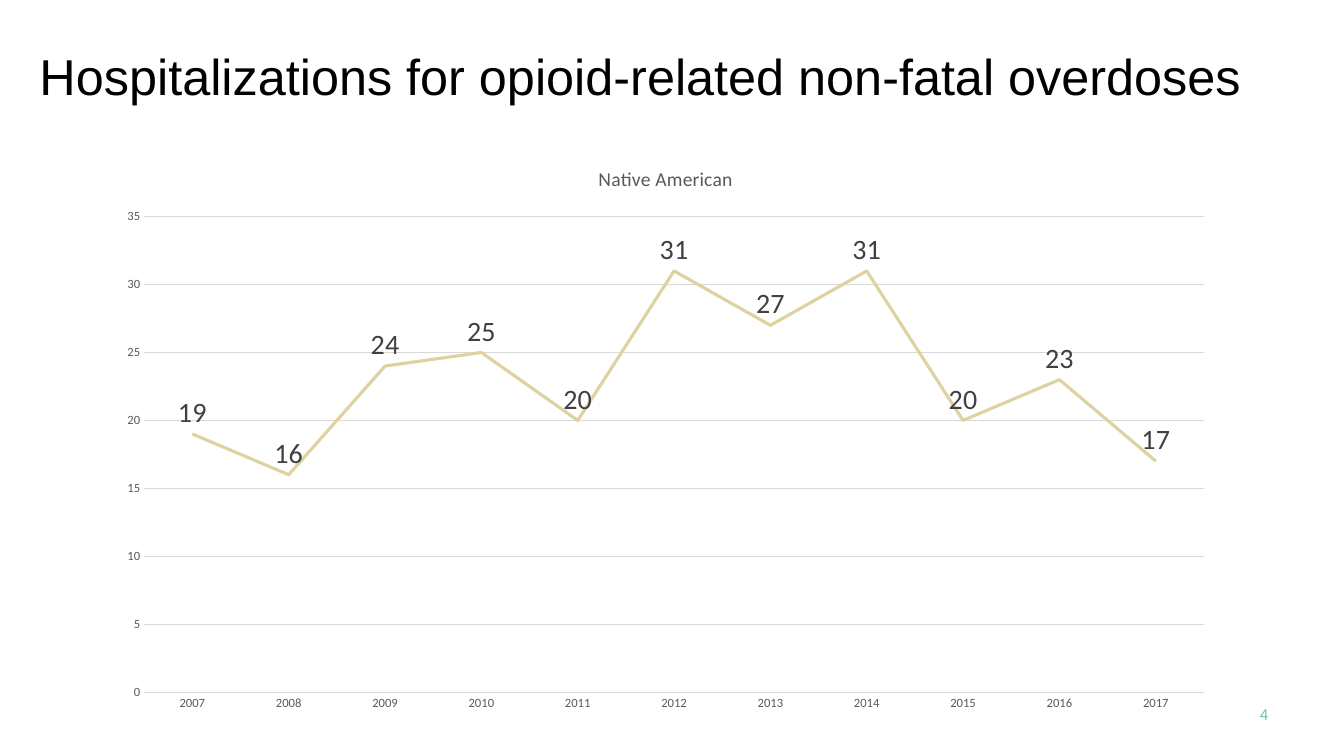
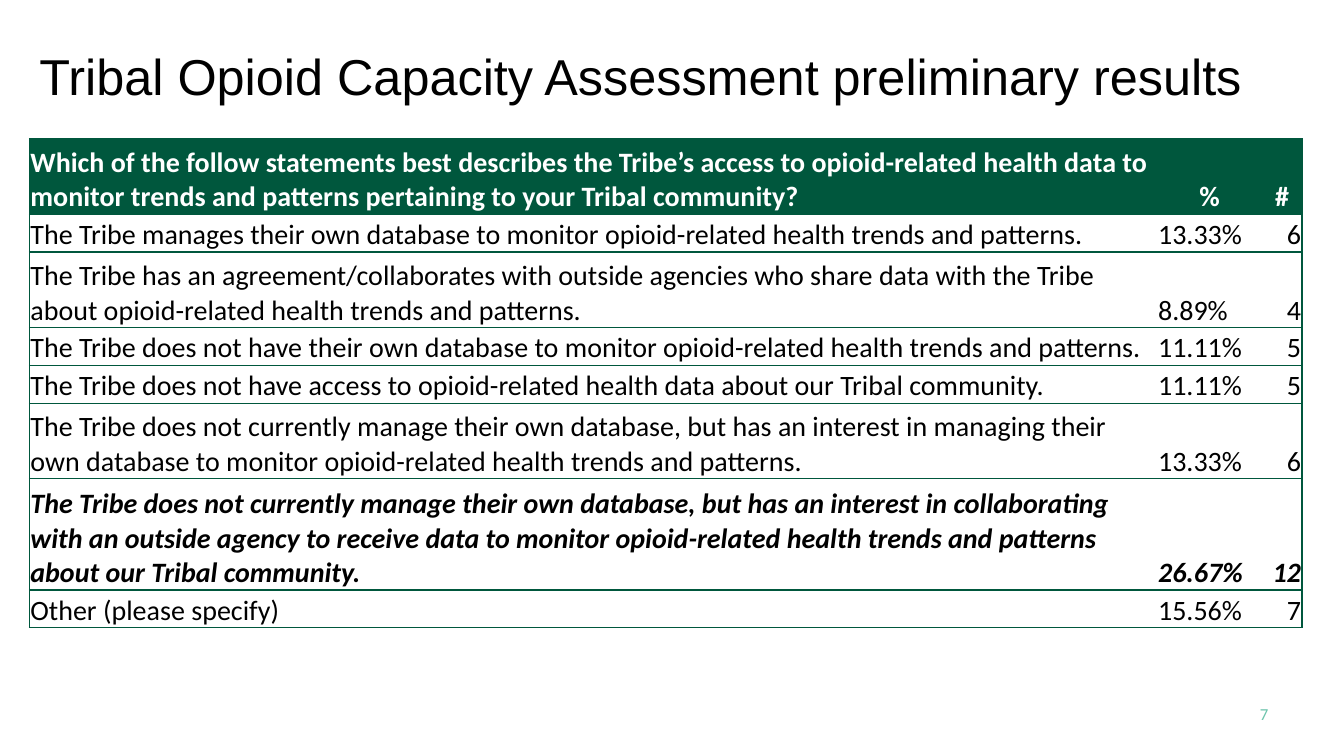
import pptx
import pptx.chart.data
import pptx.dml.color
import pptx.enum.chart
import pptx.enum.text
import pptx.oxml
import pptx.oxml.ns
import pptx.util

COLORS = {
    "black": "000000",
    "white": "FFFFFF",
    "forest": "00573D",
    "mint": "6CC4AC",
    "sand": "DED2A0",
    "grid": "D9D9D9",
    "axis": "595959",
    "label": "404040",
}
HEADING_FONT, BODY_FONT = "Arial", "Calibri"

# The slide is a grid of square units, 24 to the inch.
COLUMNS, ROWS = 320, 180
UNIT = pptx.util.Inches(1 / 24)

# Boxes are left, top, width and height in grid units.
TITLE_BOX = (7, 9, 303, 18)
NUMBER_BOX = (292, 168, 18, 4)
CHART_BOX = (25, 34.5, 267, 137.5)
TABLE_BOX = (7, 33, 303, 116.5)

ALIGN = pptx.enum.text.PP_ALIGN
ANCHOR = pptx.enum.text.MSO_ANCHOR

YEARS = [str(year) for year in range(2007, 2018)]
HOSPITALIZATIONS = [19, 16, 24, 25, 20, 31, 27, 31, 20, 23, 17]

TABLE_COLUMNS = (268.5, 25, 9.5)
TABLE_ALIGNS = (ALIGN.LEFT, ALIGN.LEFT, ALIGN.RIGHT)
HEADER_ALIGNS = (ALIGN.LEFT, ALIGN.CENTER, ALIGN.CENTER)
TABLE_ROWS = (18, 9, 18, 9, 9, 18, 26.5, 9)
EMPHASIZED_ROW = 6
ANSWERS = [
    ("Which of the follow statements best describes the Tribe’s access to opioid-related "
     "health data to monitor trends and patterns pertaining to your Tribal community?",
     "%", "#"),
    ("The Tribe manages their own database to monitor opioid-related health trends "
     "and patterns.", "13.33%", "6"),
    ("The Tribe has an agreement/collaborates with outside agencies who share data with "
     "the Tribe about opioid-related health trends and patterns.", "8.89%", "4"),
    ("The Tribe does not have their own database to monitor opioid-related health trends "
     "and patterns.", "11.11%", "5"),
    ("The Tribe does not have access to opioid-related health data about our Tribal "
     "community.", "11.11%", "5"),
    ("The Tribe does not currently manage their own database, but has an interest in "
     "managing their own database to monitor opioid-related health trends and patterns.",
     "13.33%", "6"),
    ("The Tribe does not currently manage their own database, but has an interest in "
     "collaborating with an outside agency to receive data to monitor opioid-related "
     "health trends and patterns about our Tribal community.", "26.67%", "12"),
    ("Other (please specify)", "15.56%", "7"),
]


def units(count):
    return pptx.util.Emu(round(count * UNIT))


def rgb(name):
    return pptx.dml.color.RGBColor.from_string(COLORS[name])


def style_font(font, size, color="black", name=BODY_FONT, bold=False, italic=False):
    font.name, font.size = name, pptx.util.Pt(size)
    font.bold, font.italic = bold, italic
    font.color.rgb = rgb(color)


def write(frame, text, align=ALIGN.LEFT, anchor=ANCHOR.MIDDLE, after=0, **font_format):
    """Fill a text frame with one formatted paragraph."""
    frame.word_wrap = True
    frame.vertical_anchor = anchor
    para = frame.paragraphs[0]
    para.alignment = align
    para.space_after = pptx.util.Pt(after)
    span = para.add_run()
    span.text = text
    style_font(span.font, **font_format)


def add_page(deck, title, number):
    """Add a slide with the shared title and page number."""
    page = deck.slides.add_slide(deck.slide_layouts.get_by_name("Title Only"))
    heading = page.shapes.title
    heading.left, heading.top, heading.width, heading.height = map(units, TITLE_BOX)
    heading.text_frame.auto_size = pptx.enum.text.MSO_AUTO_SIZE.NONE
    write(heading.text_frame, title, size=36, name=HEADING_FONT)

    frame = page.shapes.add_textbox(*map(units, NUMBER_BOX)).text_frame
    frame.margin_left = frame.margin_right = frame.margin_top = frame.margin_bottom = 0
    write(frame, str(number), align=ALIGN.CENTER, size=12, color="mint")
    return page


def style_line(line, color, width):
    line.color.rgb = rgb(color)
    line.width = pptx.util.Pt(width)


def style_axis(axis):
    axis.major_tick_mark = axis.minor_tick_mark = pptx.enum.chart.XL_TICK_MARK.NONE
    style_font(axis.tick_labels.font, 9, "axis")


def add_line_chart(page, box, name, categories, values):
    data = pptx.chart.data.CategoryChartData()
    data.categories = categories
    data.add_series(name, values)
    chart = page.shapes.add_chart(
        pptx.enum.chart.XL_CHART_TYPE.LINE, *map(units, box), data).chart
    style_font(chart.font, 10)
    chart.has_legend = False
    chart.has_title = True
    span = chart.chart_title.text_frame.paragraphs[0].add_run()
    span.text = name
    style_font(span.font, 14, "axis")

    style_axis(chart.category_axis)
    style_line(chart.category_axis.format.line, "grid", 0.75)
    value_axis = chart.value_axis
    style_axis(value_axis)
    value_axis.format.line.fill.background()
    value_axis.minimum_scale, value_axis.maximum_scale = 0, 35
    value_axis.major_unit = 5
    style_line(value_axis.major_gridlines.format.line, "grid", 0.75)

    plot = chart.plots[0]
    plot.vary_by_categories = False
    series = plot.series[0]
    series.smooth = False
    series.marker.style = pptx.enum.chart.XL_MARKER_STYLE.NONE
    style_line(series.format.line, "sand", 2.25)
    labels = series.data_labels
    labels.show_value = True
    labels.position = pptx.enum.chart.XL_LABEL_POSITION.ABOVE
    style_font(labels.font, 20, "label")


def set_borders(cell, sides):
    """Rule the given sides of a cell (from L, R, T, B) and clear the others."""
    properties = cell._tc.get_or_add_tcPr()
    namespace = pptx.oxml.ns.nsdecls("a")
    for side in "LRTB":
        paint = "<a:noFill/>"
        if side in sides:
            paint = f'<a:solidFill><a:srgbClr val="{COLORS["forest"]}"/></a:solidFill>'
        properties.append(pptx.oxml.parse_xml(
            f'<a:ln{side} {namespace} w="{pptx.util.Pt(1)}">{paint}</a:ln{side}>'))


def add_answer_table(page, box, answers):
    table = page.shapes.add_table(
        len(answers), len(TABLE_COLUMNS), *map(units, box)).table
    table.first_row = table.horz_banding = False
    for column, width in zip(table.columns, TABLE_COLUMNS):
        column.width = units(width)
    last = len(TABLE_COLUMNS) - 1
    for r, (answer, height) in enumerate(zip(answers, TABLE_ROWS)):
        table.rows[r].height = units(height)
        header, emphasized = r == 0, r == EMPHASIZED_ROW
        aligns = HEADER_ALIGNS if header else TABLE_ALIGNS
        for c, text in enumerate(answer):
            cell = table.cell(r, c)
            cell.margin_left = cell.margin_right = cell.margin_top = pptx.util.Inches(0.01)
            cell.margin_bottom = 0
            set_borders(cell, "TB" + "L" * (c == 0) + "R" * (c == last))
            cell.fill.solid()
            cell.fill.fore_color.rgb = rgb("forest" if header else "white")
            cell.vertical_anchor = ANCHOR.BOTTOM
            write(cell.text_frame, text, align=aligns[c], anchor=None, after=6, size=20,
                  color="white" if header else "black",
                  bold=header or emphasized, italic=emphasized)


def main():
    deck = pptx.Presentation()
    deck.slide_width, deck.slide_height = units(COLUMNS), units(ROWS)

    page = add_page(deck, "Hospitalizations for opioid-related non-fatal overdoses", 4)
    add_line_chart(page, CHART_BOX, "Native American", YEARS, HOSPITALIZATIONS)

    page = add_page(deck, "Tribal Opioid Capacity Assessment preliminary results", 7)
    add_answer_table(page, TABLE_BOX, ANSWERS)

    deck.save("out.pptx")


if __name__ == "__main__":
    main()
